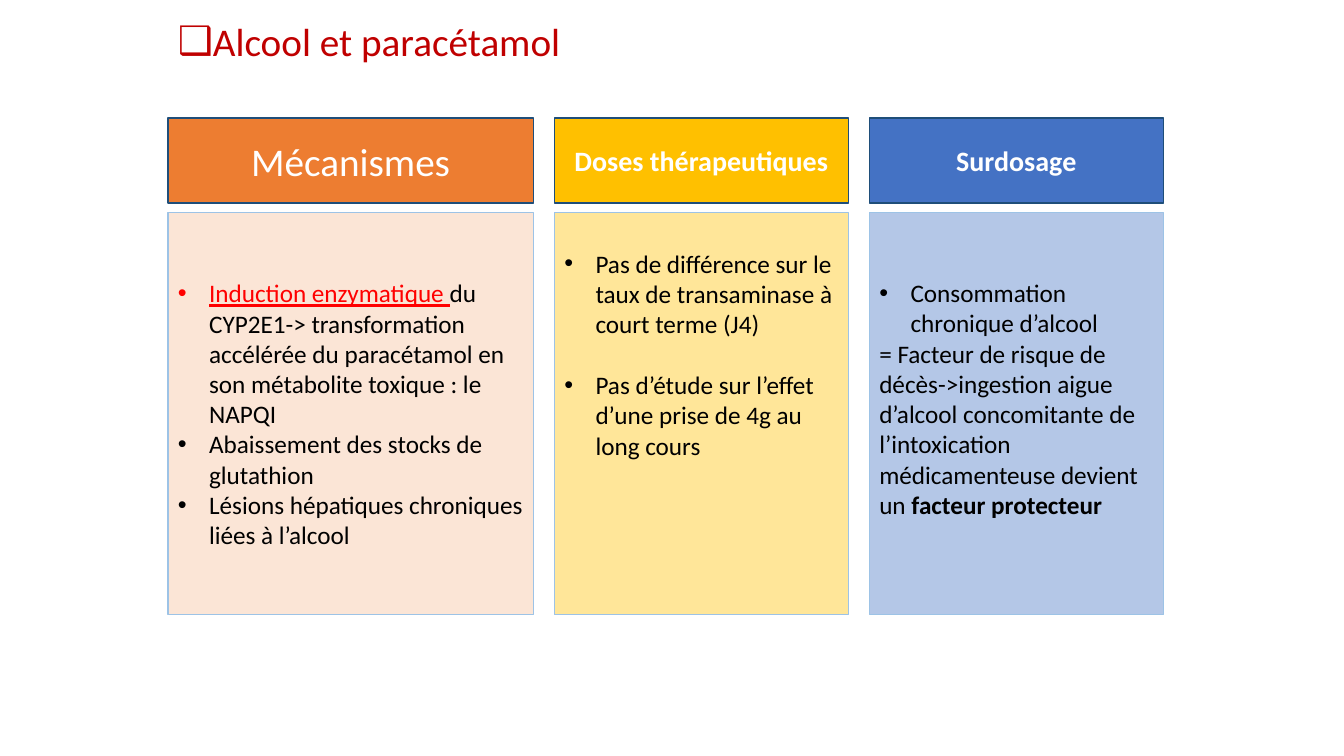
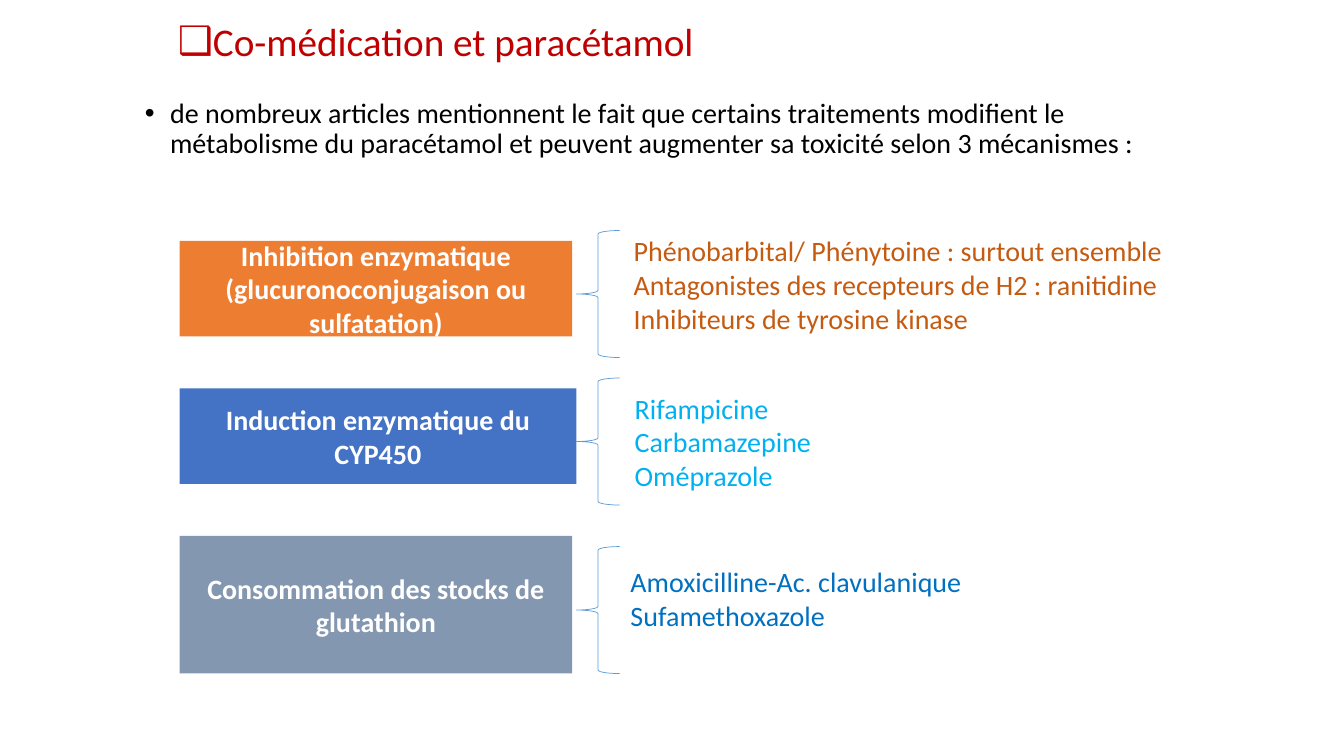
import pptx
import pptx.util
import pptx.dml.color
import pptx.enum.shapes
import pptx.enum.text
import pptx.oxml.ns
import lxml.etree

Pt = pptx.util.Pt
Inches = pptx.util.Inches
RGB = pptx.dml.color.RGBColor
SHAPE = pptx.enum.shapes.MSO_SHAPE
ALIGN = pptx.enum.text.PP_ALIGN
ANCHOR = pptx.enum.text.MSO_ANCHOR
qn = pptx.oxml.ns.qn

# Colours
BLACK = RGB(0x00, 0x00, 0x00)
WHITE = RGB(0xFF, 0xFF, 0xFF)
DARK_RED = RGB(0xC0, 0x00, 0x00)
RED = RGB(0xFF, 0x00, 0x00)
ORANGE = RGB(0xED, 0x7D, 0x31)
PEACH = RGB(0xFB, 0xE5, 0xD6)
BROWN = RGB(0xC5, 0x5A, 0x11)
GOLD = RGB(0xFF, 0xC0, 0x00)
CREAM = RGB(0xFF, 0xE6, 0x99)
BLUE = RGB(0x44, 0x72, 0xC4)
PALE_BLUE = RGB(0xB4, 0xC7, 0xE7)
SLATE = RGB(0x84, 0x97, 0xB0)
SKY = RGB(0x00, 0xB0, 0xF0)
MID_BLUE = RGB(0x00, 0x70, 0xC0)
NAVY_LINE = RGB(0x1F, 0x4E, 0x79)
LIGHT_LINE = RGB(0x9D, 0xC3, 0xE6)
BRACE_LINE = RGB(0x5B, 0x9B, 0xD5)

# Grid of square cells covering the slide
COLS, ROWS = 128, 72


class Deck:
    """Shared style and the slide being built; places are in grid cells."""

    font = "Calibri"

    def __init__(self):
        self.prs = pptx.Presentation()
        self.prs.slide_width = Inches(40 / 3)
        self.prs.slide_height = Inches(7.5)
        self.s = None

    def place(self, x, y, w, h):
        cw, ch = self.prs.slide_width / COLS, self.prs.slide_height / ROWS
        return [round(v) for v in (x * cw, y * ch, w * cw, h * ch)]

    def slide(self, title):
        self.s = self.prs.slides.add_slide(self.prs.slide_layouts[6])
        p, = self.text((16, 0, 96, 8.25), [title], 28, DARK_RED,
                       bullet="❑", anchor=ANCHOR.MIDDLE)
        p.line_spacing = 0.9

    def bullet(self, p, char, indent):
        pPr = p._p.get_or_add_pPr()
        pPr.set("marL", str(Inches(indent)))
        pPr.set("indent", str(-Inches(indent)))
        lxml.etree.SubElement(pPr, qn("a:buFont")).set("typeface", "Arial")
        lxml.etree.SubElement(pPr, qn("a:buChar")).set("char", char)

    def fill_text(self, tf, paragraphs, size, color, bold=False,
                  align=ALIGN.LEFT, bullet=None, indent=0):
        """Each paragraph is a string, or a list of strings, one per run."""
        tf.word_wrap = True
        for i, runs in enumerate(paragraphs):
            p = tf.add_paragraph() if i else tf.paragraphs[0]
            first, *rest = [runs] if isinstance(runs, str) else runs
            p.text = first
            for part in rest:
                p.add_run().text = part
            p.alignment = align
            if bullet and not first.startswith("="):
                self.bullet(p, bullet, indent)
            for r in p.runs:
                r.font.name, r.font.size = self.font, Pt(size)
                r.font.bold, r.font.color.rgb = bold, color
        return tf.paragraphs

    def text(self, at, paragraphs, size, color, anchor=ANCHOR.TOP, **style):
        tf = self.s.shapes.add_textbox(*self.place(*at)).text_frame
        tf.vertical_anchor = anchor
        return self.fill_text(tf, paragraphs, size, color, **style)

    def shape(self, kind, at, fill=None, line=None, width=1):
        sp = self.s.shapes.add_shape(kind, *self.place(*at))
        sp.shadow.inherit = False
        for part, color in ((sp.fill, fill), (sp.line.fill, line)):
            if color is None:
                part.background()
            else:
                part.solid()
                part.fore_color.rgb = color
        if line is not None:
            sp.line.width = Pt(width)
        return sp

    def heading(self, at, paragraphs, fill, line=None, size=20, bold=True):
        tf = self.shape(SHAPE.RECTANGLE, at, fill, line).text_frame
        self.fill_text(tf, paragraphs, size, WHITE, bold, ALIGN.CENTER)

    def panel(self, at, paragraphs, fill):
        tf = self.shape(SHAPE.RECTANGLE, at, fill, LIGHT_LINE).text_frame
        self.fill_text(tf, paragraphs, 18, BLACK, bullet="•", indent=0.31)
        return tf

    def brace(self, at):
        self.shape(SHAPE.LEFT_BRACE, at, line=BRACE_LINE, width=0.5)


def alcohol_slide(deck):
    deck.slide("Alcool et paracétamol")
    columns = [
        (34.8, "Mécanismes", 28, False, ORANGE, PEACH, [
            ["Induction enzymatique ",
             "du CYP2E1-> transformation accélérée du paracétamol en son "
             "métabolite toxique : le NAPQI"],
            "Abaissement des stocks de glutathion",
            "Lésions hépatiques chroniques liées à l’alcool"]),
        (28, "Doses thérapeutiques", 20, True, GOLD, CREAM, [
            "Pas de différence sur le taux de transaminase à court terme (J4)",
            "Pas d’étude sur l’effet d’une prise de 4g au long cours"]),
        (28, "Surdosage", 20, True, BLUE, PALE_BLUE, [
            "Consommation chronique d’alcool",
            ["= Facteur de risque de décès->ingestion aigue d’alcool "
             "concomitante de l’intoxication médicamenteuse devient un ",
             "facteur protecteur"]]),
    ]
    x, gap, panels = 16, 2, []
    for w, head, size, bold, dark, light, body in columns:
        deck.heading((x, 11.25, w, 8.1), [head], dark, NAVY_LINE, size, bold)
        panels.append(deck.panel((x, 20.25, w, 38.3), body, light))
        x += w + gap

    # Emphasis and spacing particular to each panel
    mechanisms, doses, overdose = panels
    induction = mechanisms.paragraphs[0].runs[0].font
    induction.color.rgb, induction.underline = RED, True
    doses.vertical_anchor = ANCHOR.TOP
    doses.margin_top = Inches(0.35)
    doses.paragraphs[1].space_before = Pt(22)
    overdose.margin_bottom = Inches(0.35)
    overdose.paragraphs[1].runs[1].font.bold = True


def comedication_slide(deck):
    deck.slide("Co-médication et paracétamol")
    intro, = deck.text(
        (12.85, 9, 99.2, 9.8),
        ["de nombreux articles mentionnent le fait que certains traitements "
         "modifient le métabolisme du paracétamol et peuvent augmenter sa "
         "toxicité selon 3 mécanismes :"],
        20, BLACK, bullet="•", indent=0.25)
    intro.line_spacing = 0.9

    # Mechanism box, brace and list of drugs on each row
    rows = [
        (37.4, 9.1, ORANGE,
         ["Inhibition enzymatique", "(glucuronoconjugaison ou sulfatation)"],
         (59.4, 21.8), BROWN,
         ["Phénobarbital/ Phénytoine : surtout ensemble",
          "Antagonistes des recepteurs de H2 : ranitidine",
          "Inhibiteurs de tyrosine kinase"]),
        (37.8, 9.1, BLUE, ["Induction enzymatique du CYP450"],
         (59.5, 36.8), SKY, ["Rifampicine", "Carbamazepine", "Oméprazole"]),
        (37.4, 13.1, SLATE, ["Consommation des stocks de glutathion"],
         (59.1, 53.3), MID_BLUE,
         ["Amoxicilline-Ac. clavulanique", "Sufamethoxazole"]),
    ]
    top, pitch, brace_h = 22.95, 14.05, 12.1
    for i, (w, h, fill, label, drugs_at, color, drugs) in enumerate(rows):
        y = top + i * pitch
        deck.heading((17.1, y, w, h), label, fill)
        deck.brace((54.9, y + (h - brace_h) / 2 + 0.5, 4.1, brace_h))
        deck.text((*drugs_at, 53, 3.6 * len(drugs)), drugs, 20, color)


def main():
    deck = Deck()
    alcohol_slide(deck)
    comedication_slide(deck)
    deck.prs.save("out.pptx")


if __name__ == "__main__":
    main()
